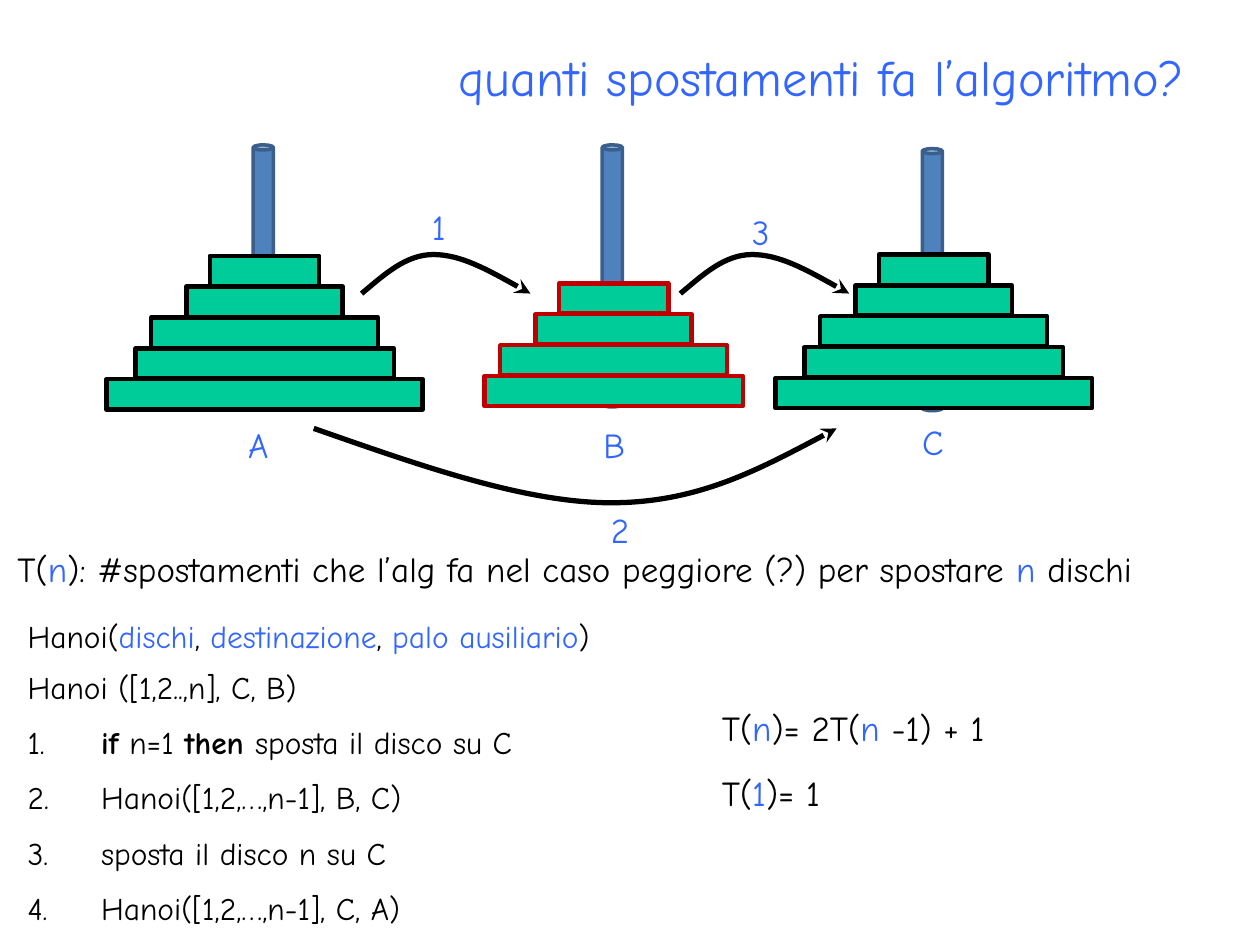
from lxml import etree
from pptx import Presentation
from pptx.dml.color import RGBColor
from pptx.enum.shapes import MSO_SHAPE
from pptx.enum.text import MSO_ANCHOR, MSO_AUTO_SIZE, PP_ALIGN
from pptx.oxml.ns import qn
from pptx.util import Inches, Pt

COLORS = {
    "blue": "3366FF", "black": "000000", "white": "FFFFFF", "green": "00CC99",
    "red": "C00000", "pole": "4F81BD", "edge": "3A5F8C",
}
WIDTHS = [0.87, 1.24, 1.8, 2.05, 2.51]
THICK, STEP = 0.24, 0.245


class Deck:
    font = "Comic Neue"

    def __init__(self, wide, high):
        self.prs = Presentation()
        self.prs.slide_width = Inches(wide)
        self.prs.slide_height = Inches(high)
        self.slide = self.prs.slides.add_slide(self.prs.slide_layouts[5])
        self.shapes = self.slide.shapes

    def color(self, name):
        return RGBColor.from_string(COLORS[name])

    def runs(self, para, parts, size):
        for text, color, bold in parts:
            run = para.add_run()
            run.text = text
            run.font.name = self.font
            run.font.size = Pt(size)
            run.font.bold = bold
            run.font.color.rgb = self.color(color)

    def title(self, text, box, size):
        shape = self.shapes.title
        shape.left, shape.top, shape.width, shape.height = map(Inches, box)
        frame = shape.text_frame
        frame.auto_size = MSO_AUTO_SIZE.NONE
        frame.vertical_anchor = MSO_ANCHOR.MIDDLE
        para = frame.paragraphs[0]
        para.alignment = PP_ALIGN.RIGHT
        self.runs(para, [(text, "blue", False)], size)

    def text(self, box, parts, wrap=True):
        frame = self.shapes.add_textbox(*map(Inches, box)).text_frame
        frame.word_wrap = wrap
        frame.auto_size = MSO_AUTO_SIZE.SHAPE_TO_FIT_TEXT
        self.runs(frame.paragraphs[0], parts, 20)

    def label(self, text, box):
        self.text(box, [(text, "blue", False)], wrap=False)

    def block(self, kind, box, fill, edge=None, width=2.5, home=None):
        shape = (home or self.shapes).add_shape(kind, *map(Inches, box))
        shape.shadow.inherit = False
        shape.fill.solid()
        shape.fill.fore_color.rgb = self.color(fill)
        if edge:
            shape.line.color.rgb = self.color(edge)
            shape.line.width = Pt(width)
        else:
            shape.line.fill.background()
        return shape

    def tower(self, mid, peak, top, count, edge="black", group=False):
        self.block(MSO_SHAPE.CAN, (mid - 0.09, peak, 0.16, 2.08), "pole", "edge", 2)
        home = self.shapes.add_group_shape().shapes if group else None
        for row, wide in enumerate(WIDTHS[:count]):
            box = (mid - wide / 2, top + row * STEP, wide, THICK)
            self.block(MSO_SHAPE.RECTANGLE, box, "green", edge, home=home)

    def code(self, box, lines):
        frame = self.block(MSO_SHAPE.RECTANGLE, box, "white").text_frame
        frame.word_wrap = True
        frame.vertical_anchor = MSO_ANCHOR.TOP
        frame.auto_size = MSO_AUTO_SIZE.SHAPE_TO_FIT_TEXT
        for row, parts in enumerate(lines):
            para = frame.add_paragraph() if row else frame.paragraphs[0]
            para.alignment = PP_ALIGN.LEFT
            para.space_before = Pt(10 if row else 0)
            props = para._p.get_or_add_pPr()
            props.set("marL", str(Inches(0.5)))
            props.set("indent", str(-Inches(0.5)))
            if row:
                etree.SubElement(props, qn("a:buFont"), typeface=self.font)
                etree.SubElement(props, qn("a:buAutoNum"), type="arabicPeriod")
            self.runs(para, parts, 18)

    def curve(self, points):
        spots = [(Inches(x), Inches(y)) for x, y in points]
        build = self.shapes.build_freeform(*spots[0])
        build.add_line_segments(spots[1:], close=False)
        shape = build.convert_to_shape()
        shape.shadow.inherit = False
        shape.fill.background()
        shape.line.color.rgb = self.color("black")
        shape.line.width = Pt(3)
        route = next(shape._element.iter(qn("a:path")))
        lines = route.findall(qn("a:lnTo"))
        for first in range(0, len(lines), 3):
            bend = etree.SubElement(route, qn("a:cubicBezTo"))
            for line in lines[first:first + 3]:
                bend.append(line[0])
                route.remove(line)
        etree.SubElement(shape.line._get_or_add_ln(), qn("a:tailEnd"), type="stealth")


def plain(text):
    return (text, "black", False)


def blue(text):
    return (text, "blue", False)


def bold(text):
    return (text, "black", True)


def main():
    deck = Deck(10, 7.5)
    deck.title("quanti spostamenti fa l’algoritmo?", (0.5, 0.3, 9, 0.61), 28.8)

    deck.tower(2.1, 1.15, 2.03, 5)
    deck.tower(4.87, 1.15, 2.25, 4, "red", group=True)
    deck.tower(7.41, 1.18, 2.02, 5)

    hop = [(2.87, 2.33), (3.05, 2.18), (3.22, 2.02), (3.44, 2.02),
           (3.66, 2.02), (3.94, 2.18), (4.21, 2.33)]
    for shift in (0, 2.53):
        deck.curve([(x + shift, y) for x, y in hop])
    deck.curve([(2.49, 3.4), (3.32, 3.69), (4.16, 3.99), (4.85, 3.99),
                (5.54, 3.99), (6.09, 3.69), (6.64, 3.4)])

    for text, box in [
        ("A", (1.87, 3.31, 0.41, 0.44)),
        ("B", (4.69, 3.31, 0.38, 0.44)),
        ("C", (7.22, 3.29, 0.45, 0.44)),
        ("1", (3.33, 1.58, 0.33, 0.44)),
        ("2", (4.75, 3.99, 0.37, 0.44)),
        ("3", (5.87, 1.62, 0.37, 0.44)),
    ]:
        deck.label(text, box)

    deck.code((0.12, 5.25, 4.49, 2.22), [
        [plain("Hanoi ([1,2..,n], C, B)")],
        [plain(" "), bold("if"), plain(" n=1 "), bold("then "),
         plain("sposta il disco su C")],
        [plain(" Hanoi([1,2,…,n-1], B, C)")],
        [plain(" sposta il disco n su C")],
        [plain(" Hanoi([1,2,…,n-1], C, A)")],
    ])
    deck.code((0.12, 4.85, 5.11, 0.4), [
        [plain("Hanoi("), blue("dischi"), plain(", "), blue("destinazione"),
         plain(", "), blue("palo ausiliario"), plain(")")],
    ])

    deck.text((0.04, 4.3, 9.88, 0.44), [
        plain("T("), blue("n"),
        plain("): #spostamenti che l’alg fa nel caso peggiore (?) per spostare "),
        blue("n "), plain("dischi")])
    deck.text((5.63, 5.56, 3.35, 0.44), [
        plain("T("), blue("n"), plain(")= 2T("), blue("n"), plain(" -1) + 1")])
    deck.text((5.63, 6.07, 3.35, 0.44), [plain("T("), blue("1"), plain(")= 1")])

    deck.prs.save("out.pptx")


if __name__ == "__main__":
    main()
